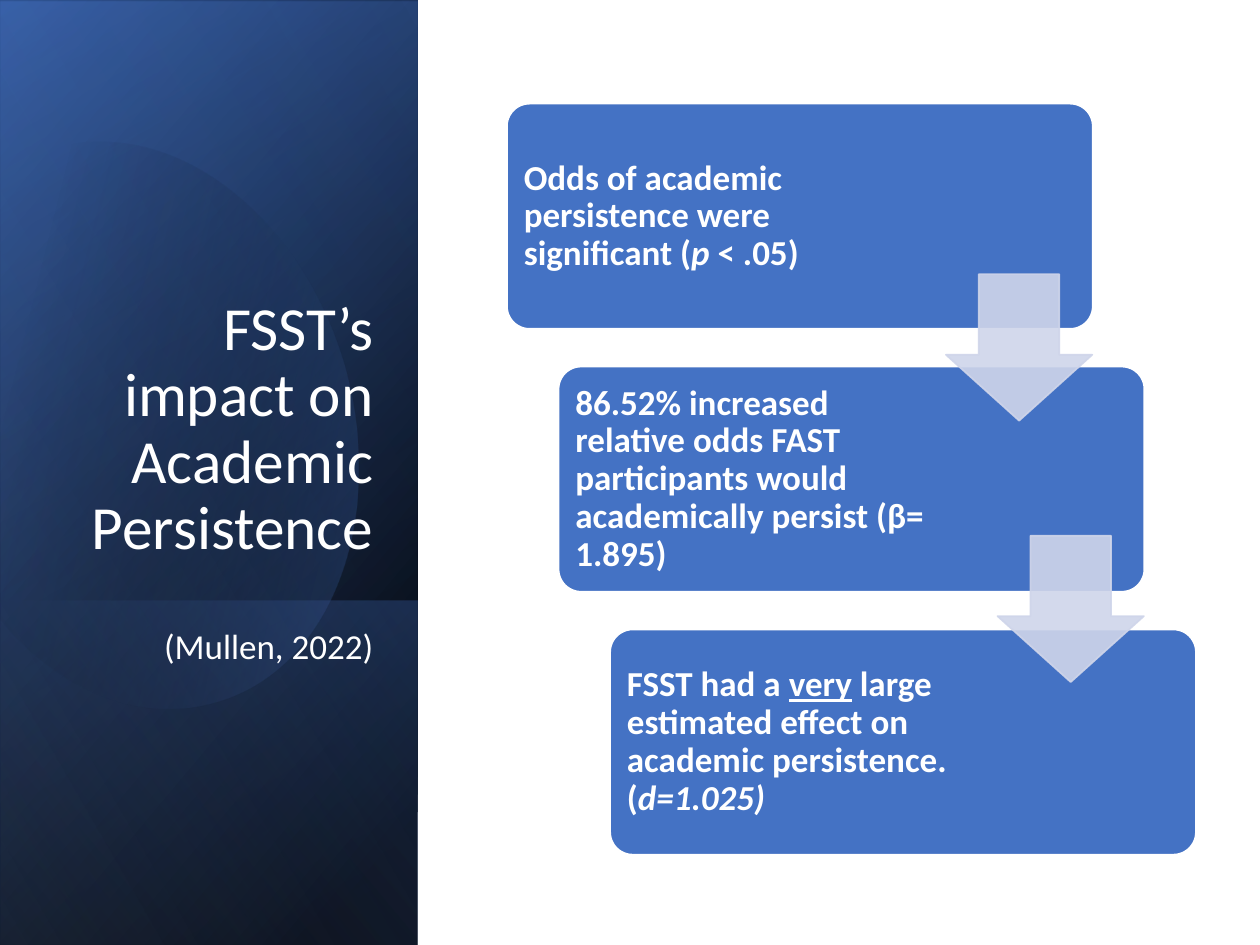
from lxml import etree
from pptx import Presentation
from pptx.dml.color import RGBColor
from pptx.enum.shapes import MSO_SHAPE
from pptx.enum.text import MSO_ANCHOR, PP_ALIGN
from pptx.oxml.ns import qn
from pptx.util import Cm, Pt

RECTANGLE = MSO_SHAPE.RECTANGLE
ROUNDED = MSO_SHAPE.ROUNDED_RECTANGLE
DOWN_ARROW = MSO_SHAPE.DOWN_ARROW
MIDDLE = MSO_ANCHOR.MIDDLE
BOTTOM = MSO_ANCHOR.BOTTOM
RIGHT = PP_ALIGN.RIGHT

COLORS = {
    "black": "000000",
    "white": "FFFFFF",
    "blue": "4472C4",
    "dark_blue": "2F5597",
    "light_blue": "8FAADC",
    "arrow": "CFD5EA",
}
FONT = "Calibri"


def set_gradient(shape, stops, angle):
    shape.shadow.inherit = False
    shape.line.fill.background()
    shape.fill.gradient()
    shape.fill.gradient_angle = 360 - angle
    stop_list = shape._element.spPr.find(".//" + qn("a:gsLst"))
    for stop in list(stop_list):
        stop_list.remove(stop)
    for position, color, opacity in stops:
        stop = etree.SubElement(stop_list, qn("a:gs"), pos=str(position * 1000))
        color_element = etree.SubElement(stop, qn("a:srgbClr"), val=COLORS[color])
        if opacity < 100:
            etree.SubElement(color_element, qn("a:alpha"), val=str(opacity * 1000))


def add_run(paragraph, text, size, bold=False, italic=None, underline=None):
    run = paragraph.add_run()
    run.text = text
    run.font.name = FONT
    run.font.size = Pt(size)
    run.font.bold = bold
    run.font.italic = italic
    run.font.underline = underline
    run.font.color.rgb = RGBColor.from_string(COLORS["white"])


presentation = Presentation()
presentation.slide_width = Cm(25.4)
presentation.slide_height = Cm(19.05)
slide = presentation.slides.add_slide(presentation.slide_layouts[6])
shapes = slide.shapes

base_panels = [
    (-5.31, 5.31, 19.05, [(8, "black", 100), (100, "dark_blue", 100)], 50),
    (-5.31, 5.36, 19.05, [(0, "black", 0), (99, "blue", 46)], 30),
    (0.74, 11.38, 6.96, [(2, "blue", 29), (100, "black", 30)], 130),
]
top_panel = (-5.31, 5.31, 19.05, [(0, "black", 0), (99, "light_blue", 11)], 120)

ellipse_start = (4.01, 2.95)
ellipse_segments = [
    [(5.79, 3.68), (7.08, 5.9), (7.09, 8.49)],
    [(7.07, 11.71), (5.13, 14.3), (2.73, 14.29)],
    [(1.22, 14.3), (-0.1, 13.29), (-0.87, 11.75)],
    [(-1.03, 11.38)],
    [(0.69, 3.37)],
    [(1.02, 3.15)],
    [(1.56, 2.85), (2.13, 2.7), (2.74, 2.69)],
    [(3.22, 2.67), (3.61, 2.78), (4.01, 2.95)],
]

for panel in base_panels + [None, top_panel]:
    if panel:
        left, top, width, stops, angle = panel
        shape = shapes.add_shape(RECTANGLE, Cm(left), Cm(top), Cm(width), Cm(8.41))
        shape.rotation = 90
        shape._element.spPr.xfrm.set("flipH", "1")
        set_gradient(shape, stops, angle)
        continue
    builder = shapes.build_freeform(Cm(ellipse_start[0]), Cm(ellipse_start[1]))
    anchors = [(Cm(segment[-1][0]), Cm(segment[-1][1])) for segment in ellipse_segments]
    builder.add_line_segments(anchors, close=True)
    ellipse = builder.convert_to_shape()
    lines = list(ellipse._element.spPr.iter(qn("a:lnTo")))
    for line, segment in zip(lines, ellipse_segments):
        if len(segment) == 3:
            line.tag = qn("a:cubicBezTo")
            for index, (x, y) in enumerate(segment[:2]):
                point = etree.Element(qn("a:pt"), x=str(Cm(x) - ellipse.left), y=str(Cm(y) - ellipse.top))
                line.insert(index, point)
    ellipse.rotation = 343.9
    set_gradient(ellipse, [(29, "black", 0), (100, "blue", 43)], 30)

title = shapes.add_textbox(Cm(1.28), Cm(5.75), Cm(6.5), Cm(7.82))
title_frame = title.text_frame
title_frame.word_wrap = True
title_frame.vertical_anchor = BOTTOM
heading = title_frame.paragraphs[0]
citation = title_frame.add_paragraph()
citation.space_before = Pt(38)
for paragraph, text, size in [
    (heading, "FSST’s impact on Academic Persistence", 35),
    (citation, "(Mullen, 2022)", 20),
]:
    paragraph.alignment = RIGHT
    paragraph.line_spacing = 0.9
    add_run(paragraph, text, size)

findings = [
    (6.91, [
        ("Odds of academic persistence were significant (", {}),
        ("p", {"italic": True}),
        (" < .05)", {}),
    ]),
    (7.54, [
        ("86.52% increased relative odds FAST participants would academically persist (β= 1.895)", {}),
    ]),
    (7.54, [
        ("FSST had a ", {}),
        ("very", {"underline": True}),
        (" large estimated effect on academic persistence. (", {}),
        ("d=1.025)", {"italic": True}),
    ]),
]
STEP_X, STEP_Y = 1.04, 5.3

for index, (text_width, runs) in enumerate(findings):
    left, top = 10.22 + index * STEP_X, 2.09 + index * STEP_Y
    card = shapes.add_shape(ROUNDED, Cm(left), Cm(top), Cm(11.81), Cm(4.54))
    card.adjustments[0] = 0.1
    card.shadow.inherit = False
    card.fill.solid()
    card.fill.fore_color.rgb = RGBColor.from_string(COLORS["blue"])
    card.line.color.rgb = RGBColor.from_string(COLORS["white"])
    card.line.width = Pt(1)

    box = shapes.add_textbox(Cm(left + 0.14), Cm(top + 0.14), Cm(text_width), Cm(4.27))
    frame = box.text_frame
    frame.word_wrap = True
    frame.vertical_anchor = MIDDLE
    frame.margin_left = frame.margin_right = Cm(0.2)
    frame.margin_top = frame.margin_bottom = Cm(0.2)
    paragraph = frame.paragraphs[0]
    paragraph.line_spacing = 0.9
    for text, style in runs:
        add_run(paragraph, text, 20, bold=True, **style)

for index in range(len(findings) - 1):
    left, top = 19.07 + index * STEP_X, 5.53 + index * 5.27
    arrow = shapes.add_shape(DOWN_ARROW, Cm(left), Cm(top), Cm(2.95), Cm(2.95))
    arrow.adjustments[0] = 0.55
    arrow.adjustments[1] = 0.45
    arrow.shadow.inherit = False
    arrow.fill.solid()
    arrow.fill.fore_color.rgb = RGBColor.from_string(COLORS["arrow"])
    arrow.line.color.rgb = RGBColor.from_string(COLORS["arrow"])
    arrow.line.width = Pt(1)
    for color_element in arrow._element.spPr.iter(qn("a:srgbClr")):
        etree.SubElement(color_element, qn("a:alpha"), val="90000")

presentation.save("out.pptx")
